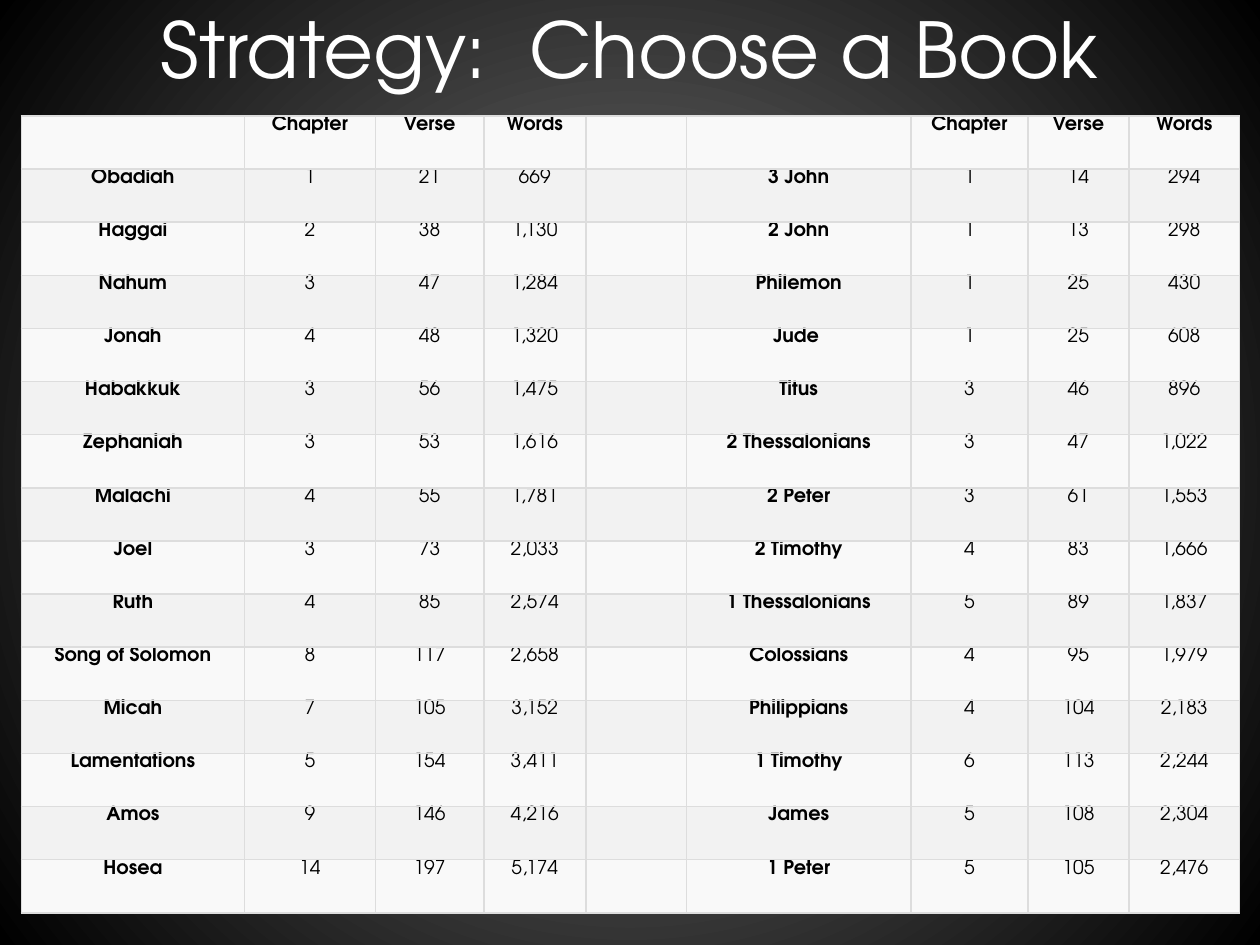
import pptx
import pptx.dml.color
import pptx.enum.text
import pptx.oxml
import pptx.oxml.ns
import pptx.util
from pptx.util import Inches

FONT = "TeX Gyre Adventor"
TITLE = "Strategy:  Choose a Book"
HEADINGS = ("", "Chapter", "Verse", "Words")
OLD_TESTAMENT = [
    ("Obadiah", "1", "21", "669"),
    ("Haggai", "2", "38", "1,130"),
    ("Nahum", "3", "47", "1,284"),
    ("Jonah", "4", "48", "1,320"),
    ("Habakkuk", "3", "56", "1,475"),
    ("Zephaniah", "3", "53", "1,616"),
    ("Malachi", "4", "55", "1,781"),
    ("Joel", "3", "73", "2,033"),
    ("Ruth", "4", "85", "2,574"),
    ("Song of Solomon", "8", "117", "2,658"),
    ("Micah", "7", "105", "3,152"),
    ("Lamentations", "5", "154", "3,411"),
    ("Amos", "9", "146", "4,216"),
    ("Hosea", "14", "197", "5,174"),
]
NEW_TESTAMENT = [
    ("3 John", "1", "14", "294"),
    ("2 John", "1", "13", "298"),
    ("Philemon", "1", "25", "430"),
    ("Jude ", "1", "25", "608"),
    ("Titus", "3", "46", "896"),
    ("2 Thessalonians", "3", "47", "1,022"),
    ("2 Peter", "3", "61", "1,553"),
    ("2 Timothy", "4", "83", "1,666"),
    ("1 Thessalonians", "5", "89", "1,837"),
    ("Colossians", "4", "95", "1,979"),
    ("Philippians", "4", "104", "2,183"),
    ("1 Timothy", "6", "113", "2,244"),
    ("James", "5", "108", "2,304"),
    ("1 Peter", "5", "105", "2,476"),
]
COLUMN_WIDTHS = [1.77, 1.04, 0.86, 0.81, 0.8, 1.78, 0.93, 0.8, 0.88]
NAME_COLUMNS = (0, 5)
TABLE_HEIGHT = 6.33
STRIPES = ("F9F9F9", "F2F2F2")
BORDER = "DDDDDD"


def colour(value):
    return pptx.dml.color.RGBColor.from_string(value)


def element(xml):
    return pptx.oxml.parse_xml(xml.replace(">", f" {pptx.oxml.ns.nsdecls('a')}>", 1))


def write(frame, text, size, shade, bold=False):
    frame.text = text
    para = frame.paragraphs[0]
    para.alignment = pptx.enum.text.PP_ALIGN.CENTER
    para.font.name = FONT
    para.font.size = pptx.util.Pt(size)
    para.font.bold = bold
    para.font.color.rgb = colour(shade)


def paint_background(page):
    fill = page.background.fill
    fill.gradient()
    for stop, position, shade in zip(fill.gradient_stops, (0, 1), ("7F7F7F", "000000")):
        stop.position = position
        stop.color.rgb = colour(shade)
    gradient = page.background._cSld.find(".//" + pptx.oxml.ns.qn("a:gradFill"))
    gradient.remove(gradient.find(pptx.oxml.ns.qn("a:lin")))
    gradient.append(element(
        '<a:path path="circle"><a:fillToRect l="50000" t="50000" r="50000" b="50000"/></a:path>'))


def add_borders(cell):
    properties = cell._tc.get_or_add_tcPr()
    for index, side in enumerate(("lnL", "lnR", "lnT", "lnB")):
        properties.insert(index, element(
            f'<a:{side} w="12700"><a:solidFill><a:srgbClr val="{BORDER}"/></a:solidFill></a:{side}>'))


def add_book_table(page):
    rows = [(*HEADINGS, "", *HEADINGS)]
    rows += [(*old, "", *new) for old, new in zip(OLD_TESTAMENT, NEW_TESTAMENT)]
    table = page.shapes.add_table(
        len(rows), len(COLUMN_WIDTHS), Inches(0.17), Inches(0.92),
        Inches(sum(COLUMN_WIDTHS)), Inches(TABLE_HEIGHT)).table
    for column, width in zip(table.columns, COLUMN_WIDTHS):
        column.width = Inches(width)
    for r, values in enumerate(rows):
        table.rows[r].height = Inches(TABLE_HEIGHT / len(rows))
        for c, value in enumerate(values):
            cell = table.cell(r, c)
            cell.margin_left = cell.margin_right = Inches(0.07)
            cell.margin_top = cell.margin_bottom = 0
            cell.fill.solid()
            cell.fill.fore_color.rgb = colour(STRIPES[r % 2])
            add_borders(cell)
            if value:
                write(cell.text_frame, value, 11, "000000", r == 0 or c in NAME_COLUMNS)


def main():
    deck = pptx.Presentation()
    deck.slide_width, deck.slide_height = Inches(10), Inches(7.5)
    page = deck.slides.add_slide(deck.slide_layouts[5])
    paint_background(page)
    title = page.shapes.title
    title.left, title.top, title.width, title.height = map(Inches, (0.5, -0.25, 9, 1.25))
    title.text_frame.vertical_anchor = pptx.enum.text.MSO_ANCHOR.MIDDLE
    write(title.text_frame, TITLE, 44, "FFFFFF")
    add_book_table(page)
    deck.save("out.pptx")


if __name__ == "__main__":
    main()
